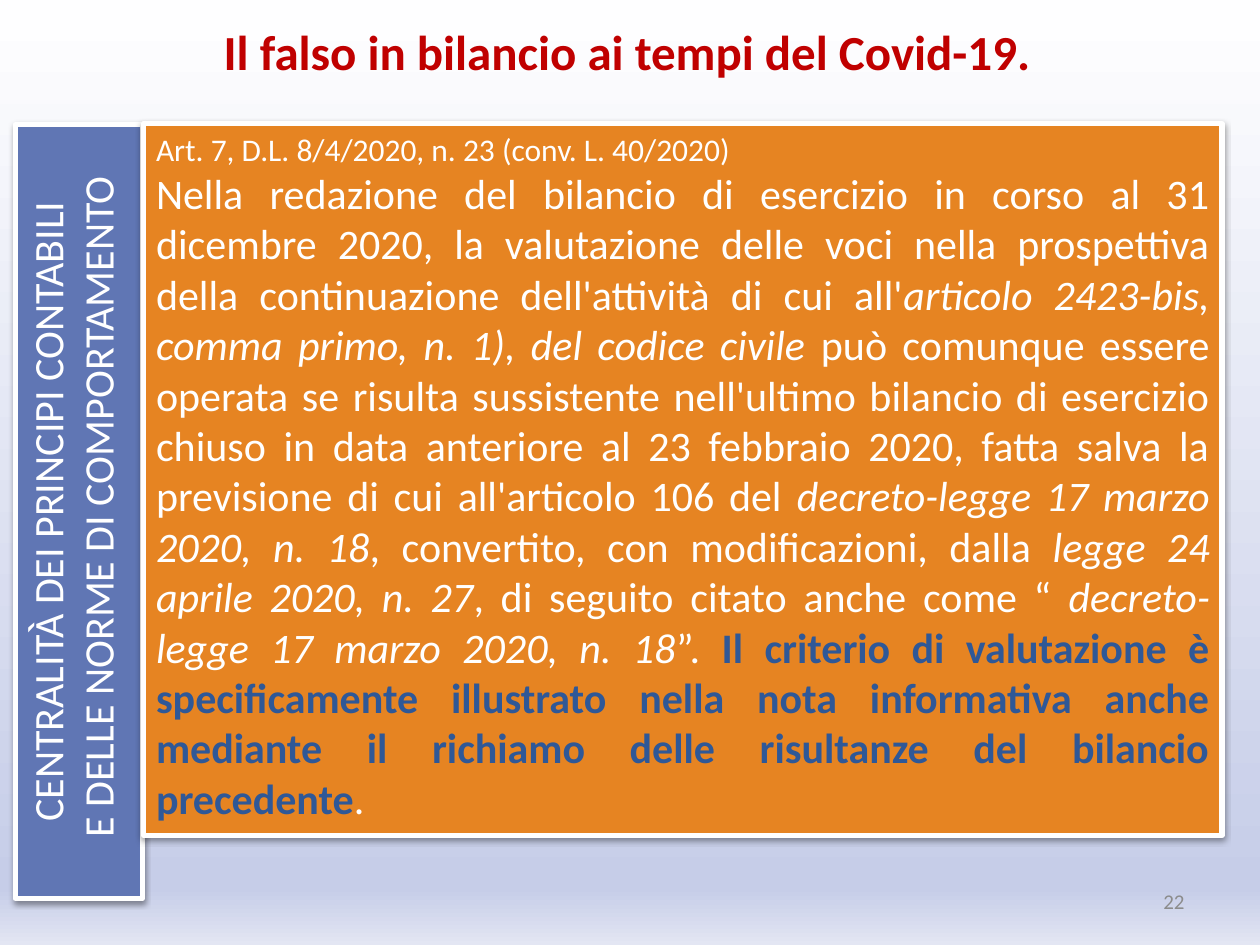
"""Build a slide on the valuation of financial statements during Covid-19."""
import copy
from dataclasses import dataclass
from typing import Optional

import pptx
import pptx.dml.color
import pptx.enum.shapes
import pptx.enum.text
import pptx.oxml
import pptx.oxml.ns
import pptx.util

Inches = pptx.util.Inches
Align = pptx.enum.text.PP_ALIGN
Anchor = pptx.enum.text.MSO_ANCHOR

WHITE, BLUE, ORANGE = "FFFFFF", "6076B4", "E68422"
RED, NAVY, GREY = "C00000", "2F5897", "8C8C8C"
BACKGROUND_STOPS = ((0.01, "FEFEFF"), (0.94, "C6CDE8"), (1, "E3E6F3"))


@dataclass
class Span:
    text: str
    italic: bool = False
    accent: Optional[str] = None


@dataclass
class Line:
    spans: list[Span]
    size: int
    align: Align
    color: str = WHITE
    bold: bool = False


@dataclass
class Block:
    left: float
    top: float
    width: float
    height: float
    lines: list[Line]
    fill: Optional[str] = None
    vertical: bool = False
    anchor: Anchor = Anchor.TOP
    grow: bool = True


DECREE = Span("decreto-legge 17 marzo 2020, n. 18", italic=True)
ARTICLE = [
    Span("Nella redazione del bilancio di esercizio in corso al 31 dicembre 2020, "
         "la valutazione delle voci nella prospettiva della continuazione "
         "dell'attività di cui all'"),
    Span("articolo 2423-bis, comma primo, n. 1), del codice civile", italic=True),
    Span(" può comunque essere operata se risulta sussistente nell'ultimo bilancio "
         "di esercizio chiuso in data anteriore al 23 febbraio 2020, fatta salva la "
         "previsione di cui all'articolo 106 del "),
    DECREE,
    Span(", convertito, con modificazioni, dalla "),
    Span("legge 24 aprile 2020, n. 27", italic=True),
    Span(", di seguito citato anche come “ "),
    DECREE,
    Span("”. "),
    Span("Il criterio di valutazione è specificamente illustrato nella nota "
         "informativa anche mediante il richiamo delle risultanze del bilancio "
         "precedente", accent=NAVY),
    Span("."),
]
BLOCKS = [
    Block(7.17, 6.95, 2.33, 0.4, [Line([Span("22")], 12, Align.RIGHT, GREY)],
          anchor=Anchor.MIDDLE, grow=False),
    Block(0.25, 0.12, 9.45, 0.57,
          [Line([Span("Il falso in bilancio ai tempi del Covid-19.")], 28,
                Align.CENTER, RED, bold=True)]),
    Block(0.12, 0.99, 1.01, 6.14,
          [Line([Span(text)], 24, Align.CENTER) for text in
           ("CENTRALITÀ DEI PRINCIPI CONTABILI", " E DELLE NORME DI COMPORTAMENTO")],
          fill=BLUE, vertical=True),
    Block(1.14, 0.98, 8.56, 5.65,
          [Line([Span("Art. 7, D.L. 8/4/2020, n. 23 (conv. L. 40/2020)")], 18,
                Align.JUSTIFY),
           Line(ARTICLE, 24, Align.JUSTIFY)],
          fill=ORANGE),
]


def rgb(value: str) -> pptx.dml.color.RGBColor:
    return pptx.dml.color.RGBColor.from_string(value)


def paint_background(slide) -> None:
    fill = slide.background.fill
    fill.gradient()
    fill.gradient_angle = 270
    stop_list = slide.element.find(".//" + pptx.oxml.ns.qn("a:gsLst"))
    stop_list.append(copy.deepcopy(stop_list[-1]))
    for stop, (position, color) in zip(fill.gradient_stops, BACKGROUND_STOPS):
        stop.position = position
        stop.color.rgb = rgb(color)


def cast_shadow(panel) -> None:
    panel.shadow.inherit = False
    effects = panel.element.spPr.find(pptx.oxml.ns.qn("a:effectLst"))
    effects.append(pptx.oxml.parse_xml(
        f'<a:outerShdw {pptx.oxml.ns.nsdecls("a")} blurRad="{pptx.util.Pt(3.1)}" '
        f'dist="{pptx.util.Pt(1.6)}" dir="5400000" rotWithShape="0">'
        '<a:srgbClr val="000000"><a:alpha val="38000"/></a:srgbClr></a:outerShdw>'))


def write_line(paragraph, line: Line) -> None:
    paragraph.alignment = line.align
    font = paragraph.font
    font.name, font.size = "Calibri", pptx.util.Pt(line.size)
    font.bold = line.bold
    font.color.rgb = rgb(line.color)
    for span in line.spans:
        run = paragraph.add_run()
        run.text = span.text
        if span.italic:
            run.font.italic = True
        if span.accent:
            run.font.bold = True
            run.font.color.rgb = rgb(span.accent)


def draw_block(slide, block: Block) -> None:
    place = [Inches(n) for n in (block.left, block.top, block.width, block.height)]
    if block.fill:
        panel = slide.shapes.add_shape(
            pptx.enum.shapes.MSO_SHAPE.RECTANGLE, *place)
        panel.fill.solid()
        panel.fill.fore_color.rgb = rgb(block.fill)
        panel.line.color.rgb = rgb(WHITE)
        panel.line.width = pptx.util.Pt(3)
        cast_shadow(panel)
    else:
        panel = slide.shapes.add_textbox(*place)
    frame = panel.text_frame
    frame.word_wrap = True
    frame.vertical_anchor = block.anchor
    if block.grow:
        frame.auto_size = pptx.enum.text.MSO_AUTO_SIZE.SHAPE_TO_FIT_TEXT
    if block.vertical:
        panel.element.txBody.bodyPr.set("vert", "vert270")
    for index, line in enumerate(block.lines):
        write_line(frame.add_paragraph() if index else frame.paragraphs[0], line)


def main() -> None:
    deck = pptx.Presentation()
    deck.slide_width, deck.slide_height = Inches(10), Inches(7.5)
    slide = deck.slides.add_slide(deck.slide_layouts[6])
    paint_background(slide)
    for block in BLOCKS:
        draw_block(slide, block)
    deck.save("out.pptx")


if __name__ == "__main__":
    main()
